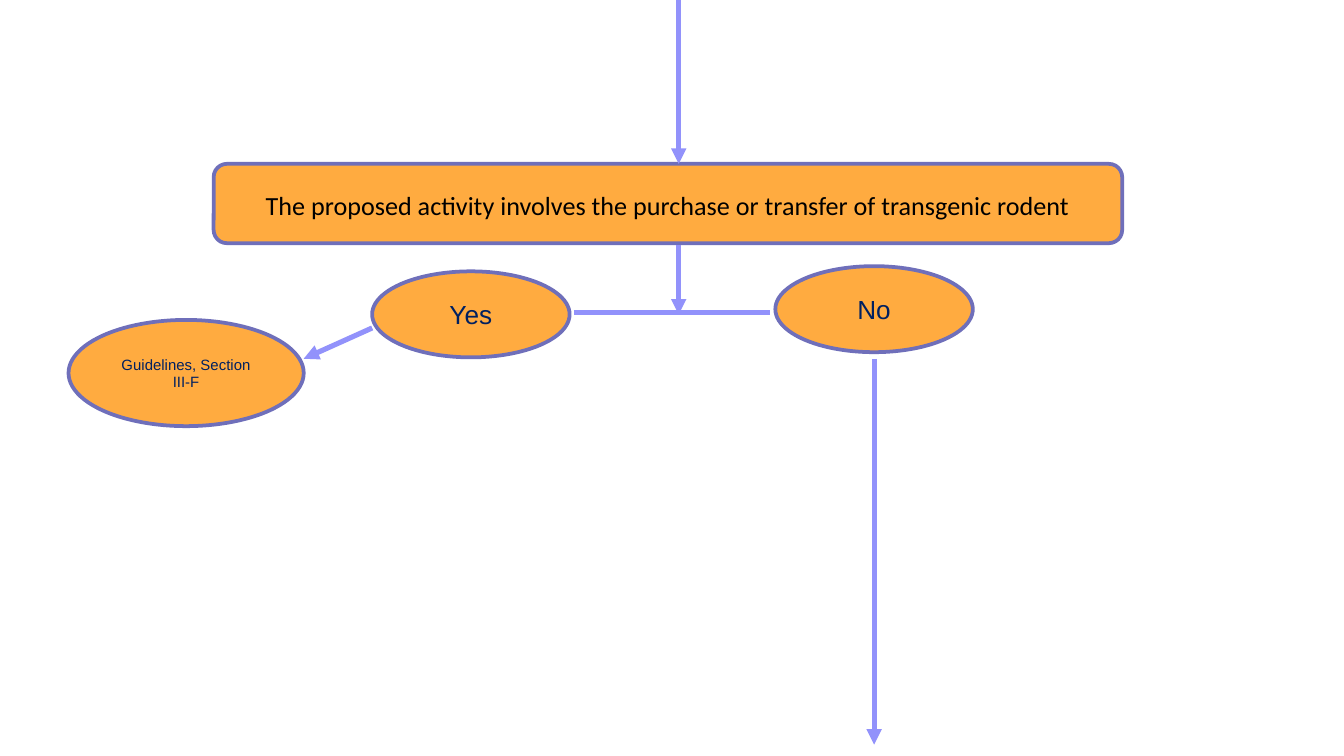
import pptx
import pptx.util
import pptx.dml.color
import pptx.enum.shapes
import pptx.enum.text
import pptx.oxml
import pptx.oxml.ns
import lxml.etree

Pt = pptx.util.Pt
Shapes = pptx.enum.shapes.MSO_SHAPE

THEME = {
    "fill": "FFAB40", "outline": "6F6FBA", "arrow": "9292FB",
    "question": {"font": "Calibri", "size": 14, "color": "000000", "spacing": 1.07},
    "answer": {"font": "Arial", "size": 14, "color": "002060", "spacing": 1},
    "outcome": {"font": "Arial", "size": 8, "color": "002060", "spacing": 1},
    "outline_width": 2, "arrow_width": 2.75,
}

SLIDE_SIZE = (720, 405)
ANSWER_SIZE = (105.8, 46.1)

NODES = [
    ("The proposed activity involves the purchase or transfer of transgenic rodent",
     Shapes.ROUNDED_RECTANGLE, "question", (114.5, 87.8, 486.7, 42.5)),
    ("Guidelines, Section III-F", Shapes.OVAL, "outcome", (36.7, 171.4, 126, 56.9)),
    ("Yes", Shapes.OVAL, "answer", (199.4, 145.4, *ANSWER_SIZE)),
    ("No", Shapes.OVAL, "answer", (415.4, 142.6, *ANSWER_SIZE)),
]

TRUNK_X = 363.6
NO_X = 468.3
LINKS = [
    ((TRUNK_X, 0), (TRUNK_X, 87.8), True),
    ((TRUNK_X, 131), (TRUNK_X, 168.5), True),
    ((307.5, 167.2), (412.6, 167.2), False),
    ((199.4, 175.7), (162.7, 192.2), True),
    ((NO_X, 192.3), (NO_X, 398.9), True),
]


def rgb(name):
    return pptx.dml.color.RGBColor.from_string(name)


def add_link(slide, start, end, has_arrow):
    link = slide.shapes.add_connector(
        pptx.enum.shapes.MSO_CONNECTOR.STRAIGHT, *map(Pt, start + end))
    link.line.color.rgb = rgb(THEME["arrow"])
    link.line.width = Pt(THEME["arrow_width"])
    properties = link._element.spPr
    if has_arrow:
        outline = properties.find(pptx.oxml.ns.qn("a:ln"))
        lxml.etree.SubElement(outline, pptx.oxml.ns.qn("a:tailEnd"), type="triangle")
    lxml.etree.SubElement(properties, pptx.oxml.ns.qn("a:effectLst"))


def add_node(slide, text, kind, style_name, place):
    style = THEME[style_name]
    node = slide.shapes.add_shape(kind, *map(Pt, place))
    node.shadow.inherit = False
    node.fill.solid()
    node.fill.fore_color.rgb = rgb(THEME["fill"])
    node.line.color.rgb = rgb(THEME["outline"])
    node.line.width = Pt(THEME["outline_width"])
    frame = node.text_frame
    frame.word_wrap = True
    frame.vertical_anchor = pptx.enum.text.MSO_ANCHOR.MIDDLE
    frame.margin_left = frame.margin_right = Pt(5)
    frame.margin_top = frame.margin_bottom = Pt(2.7)
    para = frame.paragraphs[0]
    para.alignment = pptx.enum.text.PP_ALIGN.CENTER
    para.line_spacing = style["spacing"]
    span = para.add_run()
    span.text = text
    span.font.name = style["font"]
    span.font.size = Pt(style["size"])
    span.font.color.rgb = rgb(style["color"])


def main():
    deck = pptx.Presentation()
    deck.slide_width, deck.slide_height = map(Pt, SLIDE_SIZE)
    slide = deck.slides.add_slide(deck.slide_layouts[6])
    for node in NODES:
        add_node(slide, *node)
    for link in LINKS:
        add_link(slide, *link)
    deck.save("out.pptx")


if __name__ == "__main__":
    main()
